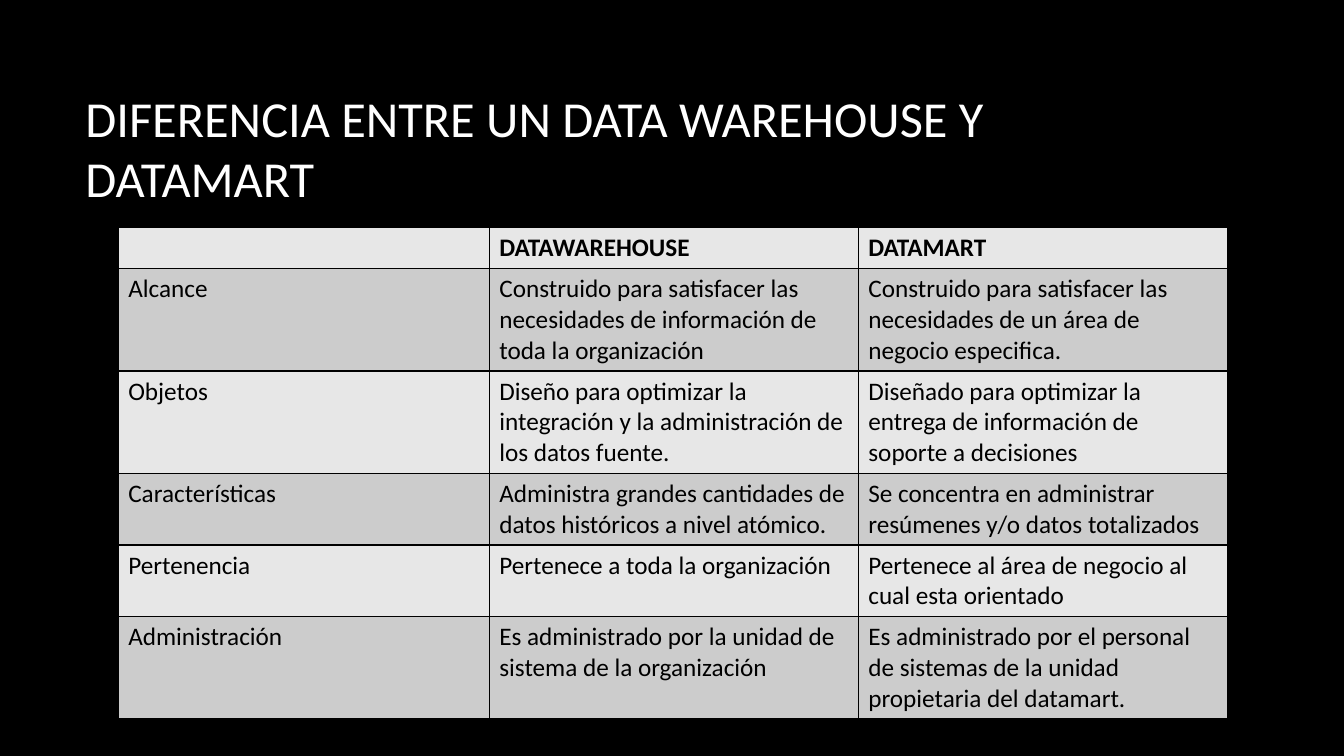
from lxml import etree
from pptx import Presentation
from pptx import util as u
from pptx.dml.color import RGBColor
from pptx.enum import text as t
from pptx.oxml import ns

COLORS = {
    "background": "000000",
    "title": "FFFFFF",
    "ink": "000000",
    "border": "000000",
    "light": "E7E7E7",
    "dark": "CCCCCC",
}
FONT = "Calibri"
COLUMN_WIDTHS = [9.35, 9.3, 9.3]
ROW_HEIGHTS = [1.02, 2.44, 2.44, 1.7, 1.7, 2.44]
COMPARISON = [
    ("", "DATAWAREHOUSE", "DATAMART"),
    ("Alcance",
     "Construido para satisfacer las necesidades de información de toda la organización",
     "Construido para satisfacer las necesidades de un área de negocio especifica."),
    ("Objetos",
     "Diseño para optimizar la integración y la administración de los datos fuente.",
     "Diseñado para optimizar la entrega de información de soporte a decisiones"),
    ("Características",
     "Administra grandes cantidades de datos históricos a nivel atómico.",
     "Se concentra en administrar resúmenes y/o datos totalizados"),
    ("Pertenencia",
     "Pertenece a toda la organización",
     "Pertenece al área de negocio al cual esta orientado"),
    ("Administración",
     "Es administrado por la unidad de sistema de la organización",
     "Es administrado por el personal de sistemas de la unidad propietaria del datamart."),
]


def rgb(name):
    return RGBColor.from_string(COLORS[name])


def write(frame, words, size=18, color="ink", bold=False):
    frame.word_wrap = True
    paragraph = frame.paragraphs[0]
    paragraph.alignment = t.PP_ALIGN.LEFT
    if not words:
        return
    run = paragraph.add_run()
    run.text = words
    run.font.name = FONT
    run.font.size = u.Pt(size)
    run.font.bold = bold
    run.font.color.rgb = rgb(color)


def add_borders(cell, color="border", width=1):
    properties = cell._tc.get_or_add_tcPr()
    for side in ("a:lnL", "a:lnR", "a:lnT", "a:lnB"):
        line = etree.SubElement(properties, ns.qn(side), w=str(u.Pt(width)))
        fill = etree.SubElement(line, ns.qn("a:solidFill"))
        etree.SubElement(fill, ns.qn("a:srgbClr"), val=COLORS[color])


def add_title(slide, words):
    title = slide.shapes.title
    title.left, title.top = u.Cm(1.9), u.Cm(1.7)
    title.width, title.height = u.Cm(28.15), u.Cm(4.03)
    title.text_frame.vertical_anchor = t.MSO_ANCHOR.MIDDLE
    write(title.text_frame, words, size=36, color="title")


def add_comparison(slide, left, top):
    table = slide.shapes.add_table(
        len(ROW_HEIGHTS), len(COLUMN_WIDTHS), u.Cm(left), u.Cm(top),
        u.Cm(sum(COLUMN_WIDTHS)), u.Cm(sum(ROW_HEIGHTS))).table
    for column, width in zip(table.columns, COLUMN_WIDTHS):
        column.width = u.Cm(width)
    for index, (row, height) in enumerate(zip(table.rows, ROW_HEIGHTS)):
        row.height = u.Cm(height)
        for cell, words in zip(row.cells, COMPARISON[index]):
            add_borders(cell)
            cell.fill.solid()
            cell.fill.fore_color.rgb = rgb("dark" if index % 2 else "light")
            write(cell.text_frame, words, bold=index == 0)


def main():
    deck = Presentation()
    deck.slide_width, deck.slide_height = u.Cm(33.87), u.Cm(19.05)
    slide = deck.slides.add_slide(deck.slide_layouts[5])
    slide.background.fill.solid()
    slide.background.fill.fore_color.rgb = rgb("background")
    add_title(slide, "DIFERENCIA ENTRE UN DATA WAREHOUSE Y DATAMART")
    add_comparison(slide, left=2.98, top=5.74)
    deck.save("out.pptx")


if __name__ == "__main__":
    main()
